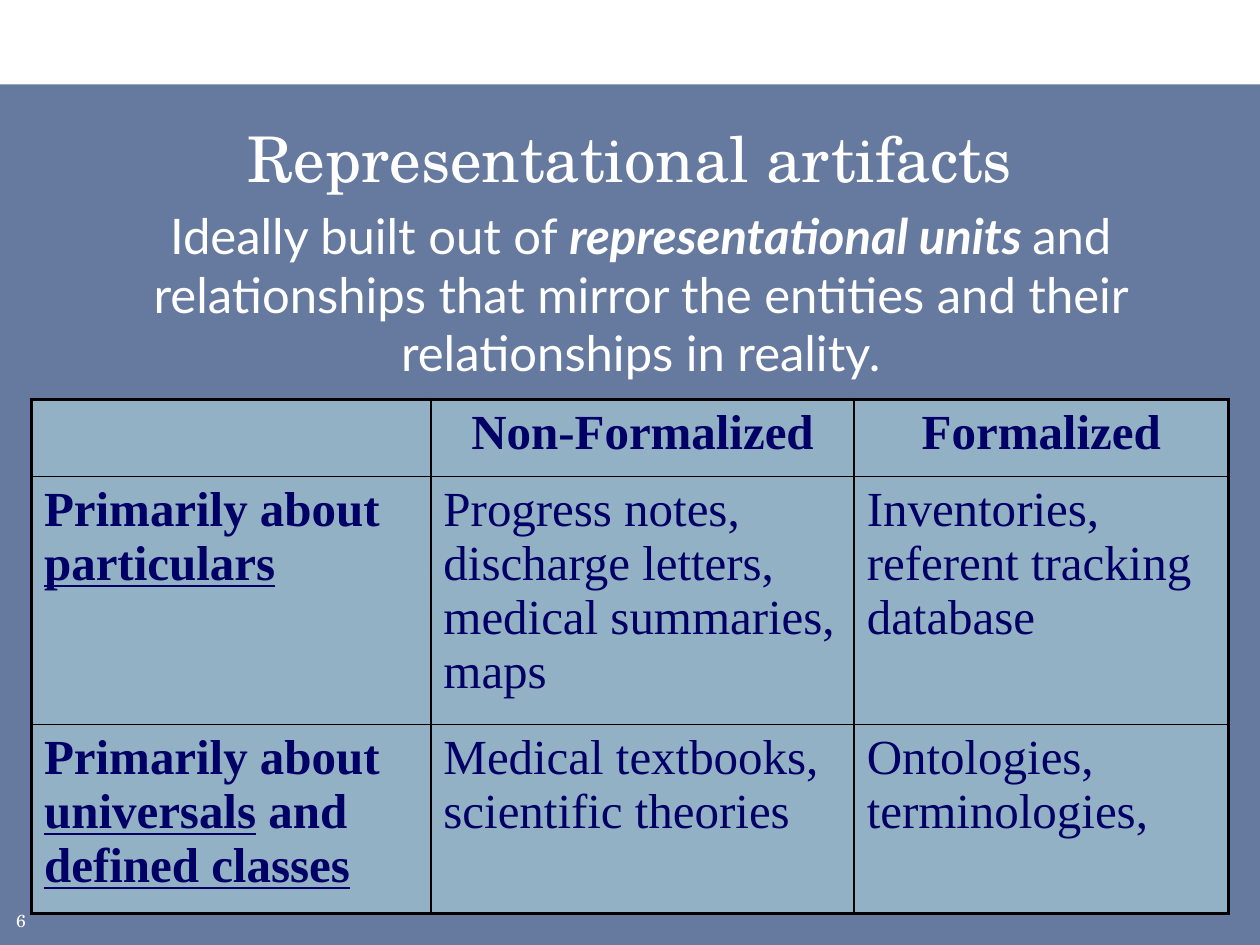
from lxml.etree import SubElement
from pptx import Presentation
from pptx.dml.color import RGBColor
from pptx.enum.shapes import MSO_SHAPE as Shape
from pptx.enum.text import MSO_ANCHOR as Anchor, PP_ALIGN as Align
from pptx.oxml.ns import qn
from pptx.util import Inches, Pt

# Content: each text is a list of (words, format) runs
PLAIN, BOLD = {"bold": False}, {"bold": True}
UNDERLINED = {"bold": True, "underline": True}
TITLE = [("Representational artifacts", {})]
SUMMARY = [
    ("Ideally built out of ", {}),
    ("representational units ", {"bold": True, "italic": True}),
    ("and relationships that mirror the entities and their relationships in reality.", {}),
]
PAGE = [("6", {})]
ARTIFACTS = [
    [[], [("Non-Formalized", BOLD)], [("Formalized", BOLD)]],
    [
        [("Primarily about ", BOLD), ("particulars", UNDERLINED)],
        [("Progress notes, discharge letters, medical summaries, maps", PLAIN)],
        [("Inventories, referent tracking database", PLAIN)],
    ],
    [
        [("Primarily about ", BOLD), ("universals", UNDERLINED),
         (" and ", BOLD), ("defined classes", UNDERLINED)],
        [("Medical textbooks, scientific theories", PLAIN)],
        [("Ontologies, terminologies,", PLAIN)],
    ],
]

# Layout and style
WIDTH, HEIGHT = 10, 7.5
BAND_TOP = 0.67
MARGIN = 0.25
TABLE_TOP = 3.17
COLUMNS = [3.17, 3.36, 2.97]
ROWS = [0.61, 1.83, 1.39]
OUTER, INNER = 2.25, 1
TITLE_FONT = {"name": "TeX Gyre Schola", "size": Pt(36)}
PAGE_FONT = {"name": "TeX Gyre Schola", "size": Pt(10)}
SUMMARY_FONT = {"name": "Lato", "size": Pt(28)}
TABLE_FONT = {"name": "Times New Roman", "size": Pt(28)}
WHITE, NAVY, INK, PALE, BLACK = "FFFFFF", "002060", "000066", "93B1C5", "000000"


def paint(fill, color):
    fill.solid()
    fill.fore_color.rgb = RGBColor.from_string(color)


def write(frame, runs, font, color, align):
    paragraph = frame.paragraphs[0]
    paragraph.alignment = align
    for key, value in font.items():
        setattr(paragraph.font, key, value)
    for words, style in runs:
        run = paragraph.add_run()
        run.text = words
        for key, value in {**font, **style}.items():
            setattr(run.font, key, value)
        run.font.color.rgb = RGBColor.from_string(color)


def add_text(slide, box, runs, font, align, anchor=Anchor.TOP):
    frame = slide.shapes.add_textbox(*map(Inches, box)).text_frame
    frame.word_wrap = True
    frame.vertical_anchor = anchor
    write(frame, runs, font, WHITE, align)


def add_border(cell, side, points):
    line = SubElement(cell._tc.get_or_add_tcPr(), qn(f"a:ln{side}"), w=str(Pt(points)))
    SubElement(SubElement(line, qn("a:solidFill")), qn("a:srgbClr"), val=BLACK)


def add_band(slide):
    band = slide.shapes.add_shape(
        Shape.RECTANGLE, 0, Inches(BAND_TOP), Inches(WIDTH), Inches(HEIGHT - BAND_TOP))
    band.shadow.inherit = False
    band.line.fill.background()
    paint(band.fill, NAVY)
    tint = band._element.spPr.find(".//" + qn("a:srgbClr"))
    SubElement(tint, qn("a:alpha"), val="60000")


def add_artifacts(slide):
    table = slide.shapes.add_table(
        len(ROWS), len(COLUMNS), Inches(MARGIN), Inches(TABLE_TOP),
        Inches(sum(COLUMNS)), Inches(sum(ROWS))).table
    table.first_row = table.horz_banding = False
    for column, width in zip(table.columns, COLUMNS):
        column.width = Inches(width)
    last_row, last_column = len(ROWS) - 1, len(COLUMNS) - 1
    for r, texts in enumerate(ARTIFACTS):
        table.rows[r].height = Inches(ROWS[r])
        for c, runs in enumerate(texts):
            cell = table.cell(r, c)
            on_edge = {"L": c == 0, "R": c == last_column, "T": r == 0, "B": r == last_row}
            for side, outside in on_edge.items():
                add_border(cell, side, OUTER if outside else INNER)
            paint(cell.fill, PALE)
            write(cell.text_frame, runs, TABLE_FONT, INK, Align.LEFT if r else Align.CENTER)


def main():
    deck = Presentation()
    deck.slide_width, deck.slide_height = Inches(WIDTH), Inches(HEIGHT)
    slide = deck.slides.add_slide(deck.slide_layouts[6])
    add_band(slide)
    add_text(slide, (0.03, 7.17, 0.47, 0.25), PAGE, PAGE_FONT, Align.LEFT)
    add_text(slide, (MARGIN, 0.83, WIDTH - 2 * MARGIN, 0.83), TITLE, TITLE_FONT,
             Align.CENTER, Anchor.MIDDLE)
    add_artifacts(slide)
    add_text(slide, (0.17, 1.58, WIDTH - 0.17, 1.17), SUMMARY, SUMMARY_FONT, Align.CENTER)
    deck.save("out.pptx")


if __name__ == "__main__":
    main()
